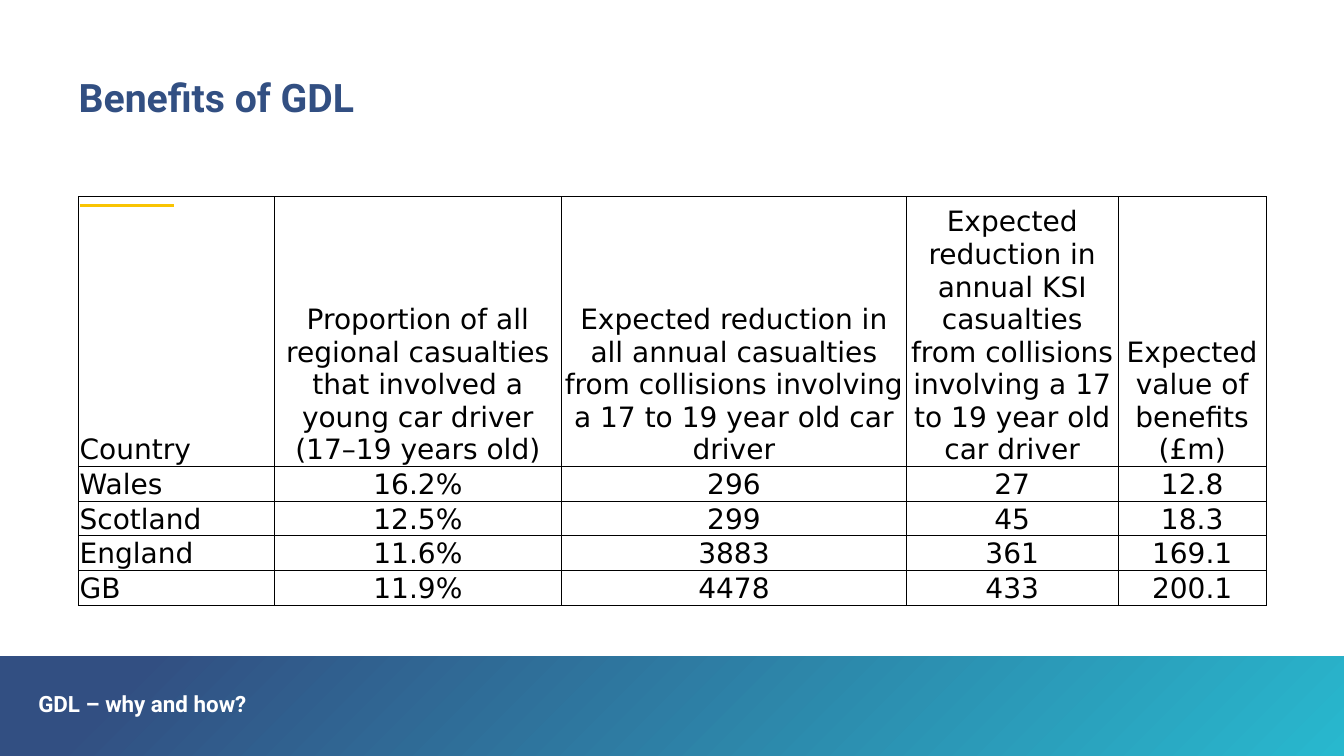
from lxml.etree import SubElement
from pptx import Presentation
from pptx.dml.color import RGBColor
from pptx.enum.shapes import MSO_CONNECTOR, MSO_SHAPE
from pptx.enum.text import MSO_ANCHOR, PP_ALIGN
from pptx.oxml import parse_xml
from pptx.oxml.ns import nsdecls, qn
from pptx.util import Inches, Pt

NAVY, TEAL, GOLD, WHITE, BLACK = "324F82", "28B8CE", "F9C402", "FFFFFF", "000000"
COLS = [1.94, 2.85, 3.42, 2.1, 1.47]
HEAD, ROW = 2.59, 0.33
ROWS = [
    ["Country",
     "Proportion of all regional casualties that involved a young car driver (17–19 years old)",
     "Expected reduction in all annual casualties from collisions involving "
     "a 17 to 19 year old car driver",
     "Expected reduction in annual KSI casualties from collisions involving "
     "a 17 to 19 year old car driver",
     "Expected value of benefits (£m)"],
    ["Wales", "16.2%", "296", "27", "12.8"],
    ["Scotland", "12.5%", "299", "45", "18.3"],
    ["England", "11.6%", "3883", "361", "169.1"],
    ["GB", "11.9%", "4478", "433", "200.1"],
]


def color(code):
    return RGBColor.from_string(code)


def assign(item, values):
    for name, value in values.items():
        setattr(item, name, value)


def style(font, name, size, code, bold=False):
    assign(font, {"name": name, "size": Pt(size), "bold": bold})
    font.color.rgb = color(code)


def label(slide, box, text, size, code):
    frame = slide.shapes.add_textbox(*map(Inches, box)).text_frame
    assign(frame, {"word_wrap": True, "margin_left": 0, "margin_right": 0,
                   "margin_top": 0, "margin_bottom": 0})
    para = frame.paragraphs[0]
    assign(para, {"text": text, "line_spacing": 0.9})
    style(para.runs[0].font, "Roboto", size, code, True)


def footer(slide, box):
    left, top, width, height = box
    band = slide.shapes.add_shape(MSO_SHAPE.RECTANGLE, *map(Inches, box))
    band.shadow.inherit = False
    band.line.fill.background()
    band.fill.gradient()
    band.fill.gradient_angle = 315
    for stop, place, code in zip(band.fill.gradient_stops, (0.1, 1), (NAVY, TEAL)):
        stop.position = place
        stop.color.rgb = color(code)
    label(slide, (left + 0.38, top + 0.37, 3.93, 0.24), "GDL – why and how?", 16, WHITE)


def accent(slide, left, top, width):
    line = slide.shapes.add_connector(
        MSO_CONNECTOR.STRAIGHT, *map(Inches, (left, top, left + width, top)))
    line.line.color.rgb = color(GOLD)
    line.line.width = Pt(2.25)
    SubElement(line.element.spPr, qn("a:effectLst"))


def border(cell):
    props = cell._tc.get_or_add_tcPr()
    for spot, side in enumerate("LRTB"):
        props.insert(spot, parse_xml(
            f'<a:ln{side} {nsdecls("a")} w="{Pt(0.5)}"><a:solidFill>'
            f'<a:srgbClr val="{BLACK}"/></a:solidFill></a:ln{side}>'))


def benefits(slide, box):
    grid = slide.shapes.add_table(len(ROWS), len(COLS), *map(Inches, box)).table
    assign(grid, {"first_row": False, "horz_banding": False})
    for col, width in zip(grid.columns, COLS):
        col.width = Inches(width)
    for r, texts in enumerate(ROWS):
        grid.rows[r].height = Inches(ROW if r else HEAD)
        for c, text in enumerate(texts):
            cell = grid.cell(r, c)
            pad = Inches(0.01)
            assign(cell, {"text": text, "vertical_anchor": MSO_ANCHOR.BOTTOM,
                          "margin_left": pad, "margin_right": pad,
                          "margin_top": pad, "margin_bottom": 0})
            cell.fill.background()
            border(cell)
            para = cell.text_frame.paragraphs[0]
            para.alignment = PP_ALIGN.CENTER if c else PP_ALIGN.LEFT
            style(para.runs[0].font, "DejaVu Sans", 20, BLACK)


def main():
    deck = Presentation()
    assign(deck, {"slide_width": Inches(13.33), "slide_height": Inches(7.5)})
    slide = deck.slides.add_slide(deck.slide_layouts[6])
    footer(slide, (0, 6.51, 13.33, 0.99))
    accent(slide, 0.79, 2.04, 0.94)
    label(slide, (0.78, 0.78, 11.77, 0.43), "Benefits of GDL", 28, NAVY)
    benefits(slide, (0.78, 1.95, sum(COLS), HEAD + ROW * (len(ROWS) - 1)))
    deck.save("out.pptx")


if __name__ == "__main__":
    main()
